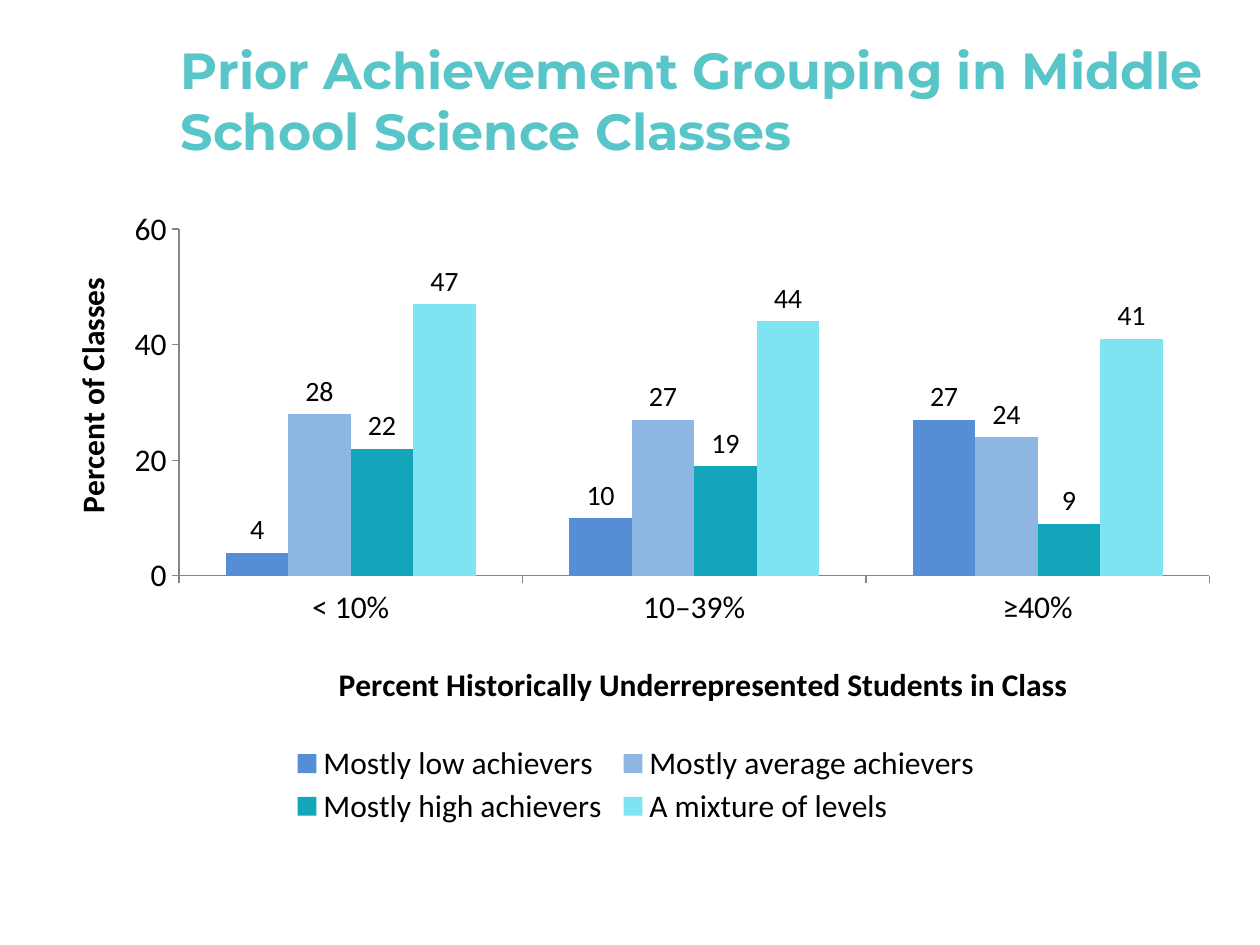
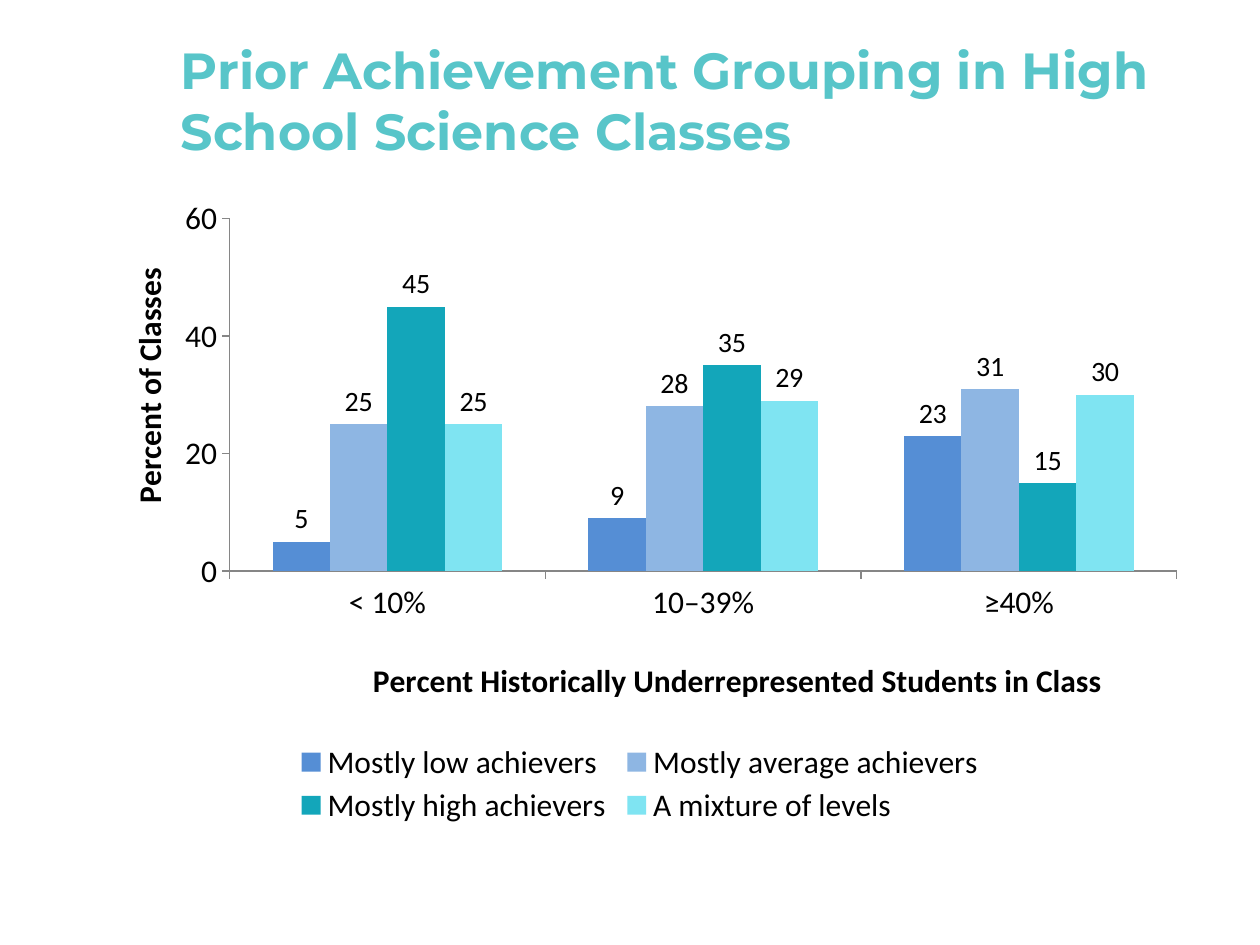
"""Build two slides of column charts on achievement grouping in science classes."""
from lxml import etree
from pptx import Presentation
from pptx.chart.data import CategoryChartData
from pptx.dml.color import RGBColor
from pptx.enum import chart as kinds, text
from pptx.oxml.ns import qn
from pptx.util import Cm, Pt

TITLE_TEAL = RGBColor(0x58, 0xC5, 0xC9)
BLACK = RGBColor(0, 0, 0)
AXIS_GREY = RGBColor(0x86, 0x86, 0x86)
TITLE_FONT, CHART_FONT = "Montserrat", "Calibri"

SERIES = [
    ("Mostly low achievers", RGBColor(0x55, 0x8E, 0xD5)),
    ("Mostly average achievers", RGBColor(0x8E, 0xB6, 0xE3)),
    ("Mostly high achievers", RGBColor(0x13, 0xA6, 0xBA)),
    ("A mixture of levels", RGBColor(0x7F, 0xE4, 0xF2)),
]
CATEGORIES = ["< 10%", "10–39%", "≥40%"]
CATEGORY_TITLE = "Percent Historically Underrepresented Students in Class"
VALUE_TITLE = "Percent of Classes"
LEGEND_WIDTH, LEGEND_HEIGHT = Cm(14.1), Cm(1.9)

SLIDES = [
    {
        "title": "Prior Achievement Grouping in Middle School Science Classes",
        "values": [(4, 10, 27), (28, 27, 24), (22, 19, 9), (47, 44, 41)],
        "frame": (Cm(1.07), Cm(4.23), Cm(23.5), Cm(12.5)),
        "plot": (0.108, 0.03, 0.884, 0.56),
        "category_title_at": (0.24, 0.72),
        "value_title_at": (0.01, 0.1),
    },
    {
        "title": "Prior Achievement Grouping in High School Science Classes",
        "values": [(5, 9, 23), (25, 28, 31), (45, 35, 15), (25, 29, 30)],
        "frame": (Cm(1.9), Cm(4.02), Cm(22), Cm(12.7)),
        "plot": (0.124, 0.03, 0.868, 0.56),
        "category_title_at": (0.25, 0.72),
        "value_title_at": (0.025, 0.1),
    },
]


def set_layout(parent, index, place, inner=False):
    """Give a chart part a manual place, as fractions of the chart."""
    for old in parent.findall(qn("c:layout")):
        parent.remove(old)
    layout = etree.Element(qn("c:layout"))
    manual = etree.SubElement(layout, qn("c:manualLayout"))
    settings = [("layoutTarget", "inner")] if inner else []
    settings += [("xMode", "edge"), ("yMode", "edge")]
    settings += zip("xywh", place)
    for name, value in settings:
        etree.SubElement(manual, qn(f"c:{name}")).set("val", str(value))
    parent.insert(index, layout)


def style_axis(axis, title, place):
    """Format an axis and put its title in place."""
    axis.has_major_gridlines = False
    axis.major_tick_mark = kinds.XL_TICK_MARK.OUTSIDE
    axis.format.line.color.rgb = AXIS_GREY
    axis.format.line.width = Pt(0.75)
    frame = axis.axis_title.text_frame
    frame.text = title
    font = frame.paragraphs[0].font
    font.name, font.size, font.bold = CHART_FONT, Pt(18), True
    font.color.rgb = BLACK
    set_layout(axis.axis_title._element, 1, place)


def add_title(page, wording):
    """Fill and place the title placeholder."""
    title = page.shapes.title
    title.left, title.top, title.width, title.height = Cm(3.39), Cm(0.42), Cm(21.17), Cm(3.18)
    frame = title.text_frame
    frame.text = wording
    frame.word_wrap = True
    frame.auto_size = text.MSO_AUTO_SIZE.NONE
    frame.vertical_anchor = text.MSO_ANCHOR.MIDDLE
    para = frame.paragraphs[0]
    para.alignment = text.PP_ALIGN.LEFT
    para.font.name, para.font.size, para.font.bold = TITLE_FONT, Pt(29), True
    para.font.color.rgb = TITLE_TEAL


def add_column_chart(page, content):
    """Draw the clustered columns with axes, labels and legend."""
    data = CategoryChartData()
    data.categories = CATEGORIES
    for (name, _), values in zip(SERIES, content["values"]):
        data.add_series(name, values)
    frame = content["frame"]
    chart = page.shapes.add_chart(kinds.XL_CHART_TYPE.COLUMN_CLUSTERED, *frame, data).chart
    chart.has_title = False
    chart.font.name, chart.font.size = CHART_FONT, Pt(18)
    chart.font.color.rgb = BLACK

    plot = chart.plots[0]
    plot.gap_width, plot.overlap, plot.vary_by_categories = 150, 0, False
    for series, (_, color) in zip(plot.series, SERIES):
        series.format.fill.solid()
        series.format.fill.fore_color.rgb = color
        labels = series.data_labels
        labels.show_value = True
        labels.position = kinds.XL_LABEL_POSITION.OUTSIDE_END
        labels.font.name, labels.font.size = CHART_FONT, Pt(16)
        labels.font.color.rgb = BLACK
    set_layout(chart._chartSpace.chart.plotArea, 0, content["plot"], inner=True)

    style_axis(chart.category_axis, CATEGORY_TITLE, content["category_title_at"])
    style_axis(chart.value_axis, VALUE_TITLE, content["value_title_at"])
    scale = chart.value_axis
    scale.minimum_scale, scale.maximum_scale, scale.major_unit = 0, 60, 20

    chart.has_legend = True
    legend = chart.legend
    legend.position = kinds.XL_LEGEND_POSITION.BOTTOM
    legend.include_in_layout = False
    width = round(LEGEND_WIDTH / frame[2], 2)
    height = round(LEGEND_HEIGHT / frame[3], 2)
    set_layout(legend._element, 1, (round((1 - width) / 2, 2), 0.855, width, height))


def main():
    """Build and save the deck."""
    deck = Presentation()
    deck.slide_width, deck.slide_height = Cm(25.4), Cm(19.05)
    for content in SLIDES:
        page = deck.slides.add_slide(deck.slide_layouts[5])
        add_column_chart(page, content)
        add_title(page, content["title"])
    deck.save("out.pptx")


if __name__ == "__main__":
    main()
